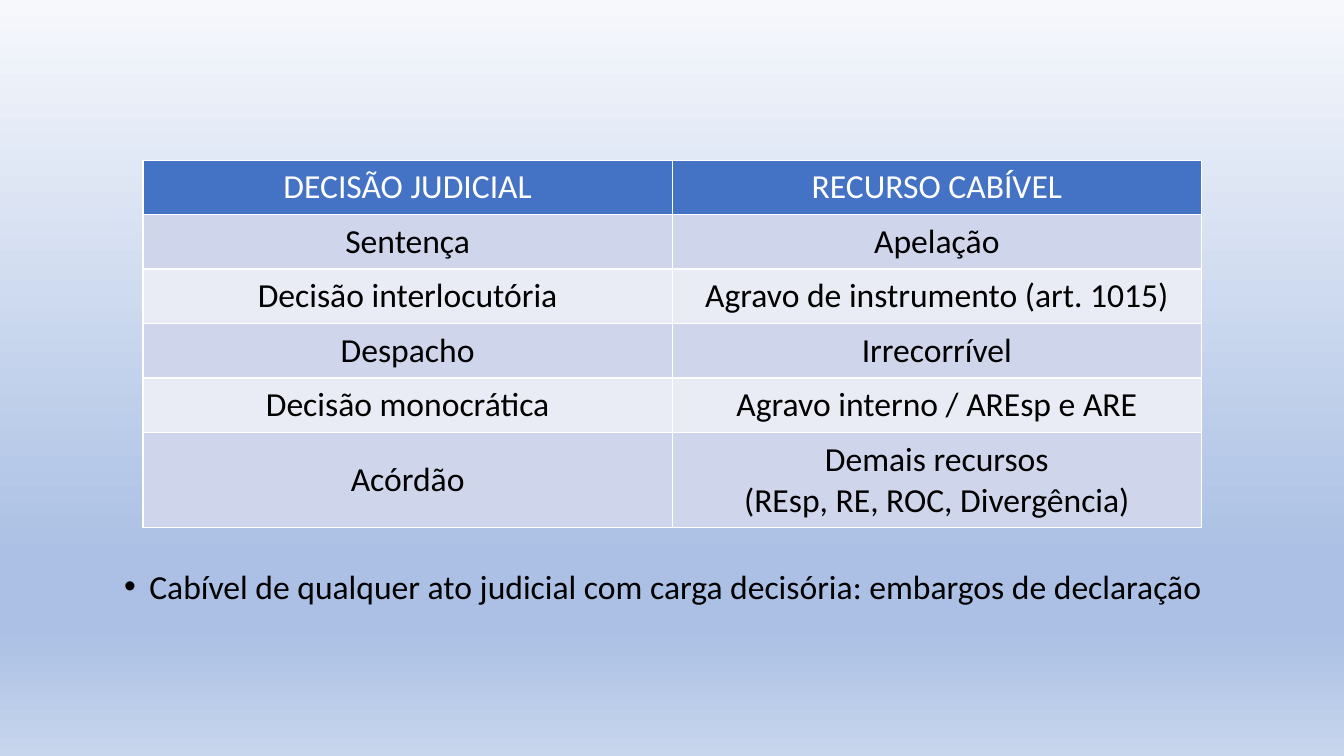
from dataclasses import dataclass

from lxml.etree import SubElement
from pptx import Presentation
from pptx.dml.color import RGBColor
from pptx.enum.text import MSO_ANCHOR, MSO_AUTO_SIZE, PP_ALIGN
from pptx.oxml.ns import qn
from pptx.slide import Slide
from pptx.table import _Cell
from pptx.text.text import _Paragraph
from pptx.util import Pt


@dataclass(frozen=True)
class Theme:
    font: str = "Calibri"
    text_size: float = 24
    border_width: float = 1
    white: str = "FFFFFF"
    black: str = "000000"
    header_fill: str = "4472C4"
    band_fills: tuple[str, str] = ("CFD5EA", "E9EBF5")
    background_stops: tuple[tuple[int, str], ...] = (
        (0, "F6F8FC"), (74, "ABC0E4"), (83, "ABC0E4"), (100, "C7D5ED"),
    )


@dataclass(frozen=True)
class AppealRow:
    decision: str
    appeal: tuple[str, ...]
    height: float = 38.9


THEME = Theme()
APPEAL_ROWS = (
    AppealRow("DECISÃO JUDICIAL", ("RECURSO CABÍVEL",)),
    AppealRow("Sentença", ("Apelação",)),
    AppealRow("Decisão interlocutória", ("Agravo de instrumento (art. 1015)",)),
    AppealRow("Despacho", ("Irrecorrível",)),
    AppealRow("Decisão monocrática", ("Agravo interno / AREsp e ARE",)),
    AppealRow("Acórdão", ("Demais recursos", "(REsp, RE, ROC, Divergência)"), 67.2),
)
CLOSING_NOTE = (
    "Cabível de qualquer ato judicial com carga decisória: embargos de declaração"
)


def add_run(paragraph: _Paragraph, text: str, color: str) -> None:
    run = paragraph.add_run()
    run.text = text
    run.font.name = THEME.font
    run.font.size = Pt(THEME.text_size)
    run.font.bold = False
    run.font.color.rgb = RGBColor.from_string(color)


def paint_background(slide: Slide) -> None:
    fill = slide.background.fill
    fill.gradient()
    fill.gradient_angle = 270
    stop_list = next(slide.element.iter(qn("a:gsLst")))
    for stop in list(stop_list):
        stop_list.remove(stop)
    for percent, color in THEME.background_stops:
        stop = SubElement(stop_list, qn("a:gs"), pos=str(percent * 1000))
        SubElement(stop, qn("a:srgbClr"), val=color)


def add_borders(cell: _Cell) -> None:
    properties = cell._tc.get_or_add_tcPr()
    for side in "LRTB":
        line = SubElement(
            properties, qn(f"a:ln{side}"), w=str(Pt(THEME.border_width))
        )
        line_fill = SubElement(line, qn("a:solidFill"))
        SubElement(line_fill, qn("a:srgbClr"), val=THEME.white)


def write_cell(
    cell: _Cell, lines: tuple[str, ...], fill: str, color: str, anchor: MSO_ANCHOR
) -> None:
    add_borders(cell)
    cell.fill.solid()
    cell.fill.fore_color.rgb = RGBColor.from_string(fill)
    cell.vertical_anchor = anchor
    cell.margin_left = cell.margin_right = Pt(9.6)
    cell.margin_top = cell.margin_bottom = Pt(4.8)
    frame = cell.text_frame
    for index, line in enumerate(lines):
        paragraph = frame.add_paragraph() if index else frame.paragraphs[0]
        paragraph.alignment = PP_ALIGN.CENTER
        add_run(paragraph, line, color)


def add_appeal_table(slide: Slide) -> None:
    height = sum(row.height for row in APPEAL_ROWS)
    table = slide.shapes.add_table(
        len(APPEAL_ROWS), 2, Pt(102.2), Pt(114.4), Pt(756), Pt(height)
    ).table
    for index, row in enumerate(APPEAL_ROWS):
        table.rows[index].height = Pt(row.height)
        if index == 0:
            fill, color, anchor = THEME.header_fill, THEME.white, MSO_ANCHOR.TOP
        else:
            fill = THEME.band_fills[(index - 1) % 2]
            color, anchor = THEME.black, MSO_ANCHOR.MIDDLE
        for column, lines in enumerate(((row.decision,), row.appeal)):
            write_cell(table.cell(index, column), lines, fill, color, anchor)


def write_closing_note(slide: Slide) -> None:
    """Fill the body placeholder, with its bullet set below the table."""
    body = slide.placeholders[1]
    body.left, body.top = Pt(81.4), Pt(141.1)
    body.width, body.height = Pt(878.4), Pt(398.9)
    frame = body.text_frame
    frame.auto_size = MSO_AUTO_SIZE.NONE
    frame.word_wrap = True
    frame.vertical_anchor = MSO_ANCHOR.TOP
    frame.margin_top = Pt(266)
    paragraph = frame.paragraphs[0]
    paragraph.line_spacing = 0.9
    paragraph.space_before = Pt(0)
    properties = paragraph._p.get_or_add_pPr()
    properties.set("marL", str(Pt(18)))
    properties.set("indent", str(-Pt(18)))
    SubElement(properties, qn("a:buFont"), typeface="Arial")
    SubElement(properties, qn("a:buChar"), char="•")
    add_run(paragraph, CLOSING_NOTE, THEME.black)


def main() -> None:
    presentation = Presentation()
    presentation.slide_width, presentation.slide_height = Pt(960), Pt(540)
    content_layout = presentation.slide_layouts.get_by_name("Title and Content")
    slide = presentation.slides.add_slide(content_layout)
    title = slide.shapes.title.element
    title.getparent().remove(title)
    paint_background(slide)
    write_closing_note(slide)
    add_appeal_table(slide)
    presentation.save("out.pptx")


if __name__ == "__main__":
    main()
